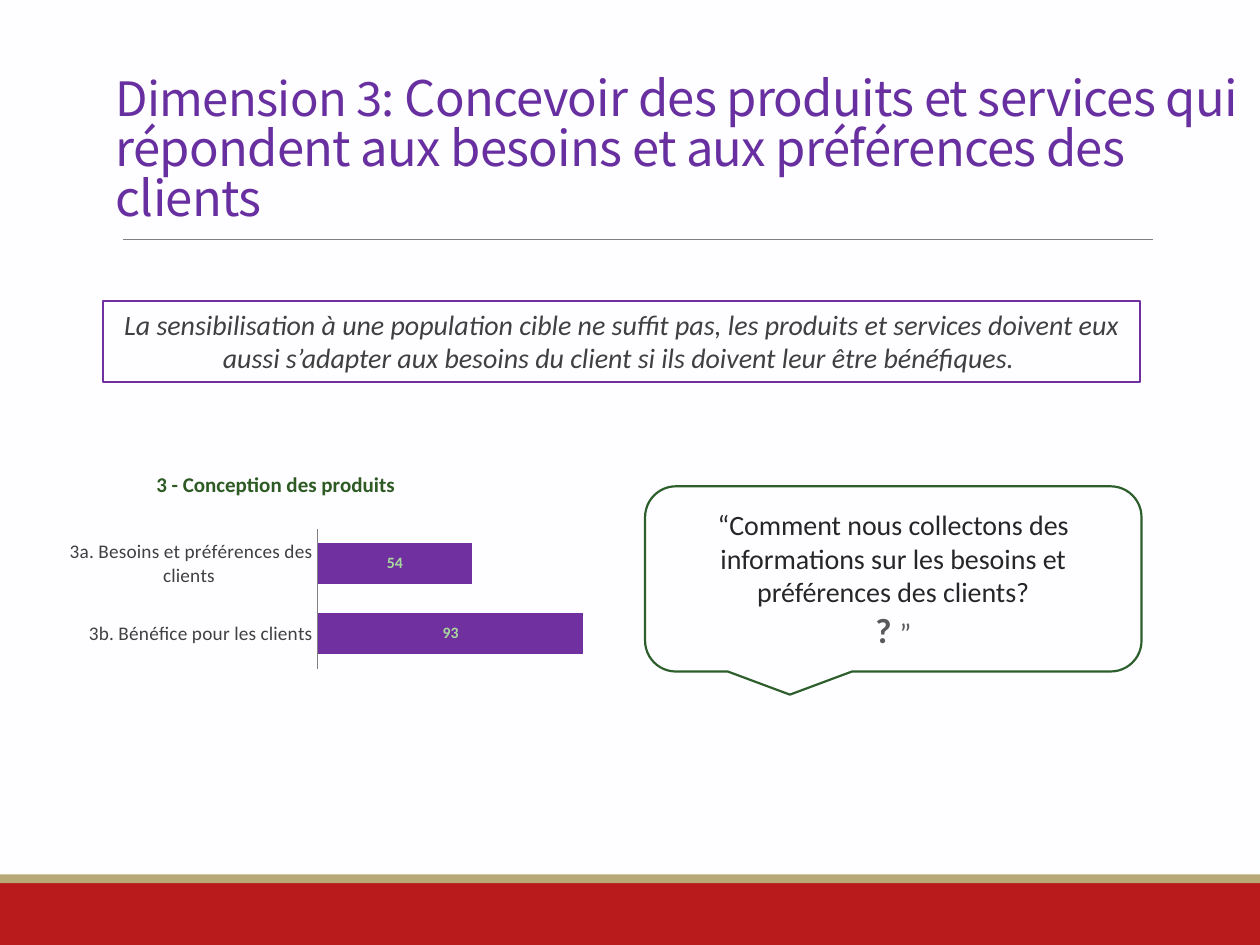
from pptx import Presentation
from pptx.chart.data import CategoryChartData
from pptx.dml.color import RGBColor
from pptx.enum.chart import XL_CHART_TYPE as ChartType, XL_LABEL_POSITION as LabelPosition, XL_TICK_MARK as TickMark
from pptx.enum.shapes import MSO_CONNECTOR as Connector, MSO_SHAPE as Shape
from pptx.enum.text import MSO_ANCHOR as Anchor, PP_ALIGN as Align
from pptx.oxml import parse_xml
from pptx.oxml.ns import nsdecls, qn
from pptx.util import Inches, Pt

PAPER = RGBColor(0xFE, 0xFD, 0xFF)
RED = RGBColor(0xB9, 0x1A, 0x1B)
GOLD = RGBColor(0xB8, 0xAA, 0x76)
GRAY = RGBColor(0x80, 0x80, 0x80)
TITLE_PURPLE = RGBColor(0x68, 0x2F, 0xA1)
PURPLE = RGBColor(0x70, 0x30, 0xA0)
GREEN = RGBColor(0x2D, 0x5F, 0x2D)
CHART_GREEN = RGBColor(0x2D, 0x5B, 0x23)
LABEL_GREEN = RGBColor(0xA7, 0xD9, 0x9C)
INK = RGBColor(0x26, 0x26, 0x26)
TEXT_GRAY = RGBColor(0x40, 0x40, 0x40)
MARK_GRAY = RGBColor(0x59, 0x59, 0x59)
BODY_FONT = "Calibri"
TITLE_FONT = "Noto Sans CJK KR"


def style_font(font, size, color, name=BODY_FONT, bold=False, italic=False):
    font.name, font.size = name, Pt(size)
    font.bold, font.italic = bold, italic
    font.color.rgb = color


def write_text(paragraph, text, spacing=None, **style):
    run = paragraph.add_run()
    run.text = text
    style_font(run.font, **style)
    if spacing is not None:
        run.font._element.set("spc", str(round(spacing * 100)))


def place_manually(element, index, inner=False, **fractions):
    for layout in element.findall(qn("c:layout")):
        element.remove(layout)
    target = '<c:layoutTarget val="inner"/>' if inner else ""
    modes = "".join(f'<c:{axis}Mode val="edge"/>' for axis in "xy")
    values = "".join(f'<c:{key} val="{value}"/>' for key, value in fractions.items())
    element.insert(index, parse_xml(
        f'<c:layout {nsdecls("c")}><c:manualLayout>{target}{modes}{values}</c:manualLayout></c:layout>'))


class SlideBuilder:
    def __init__(self, slide):
        self.slide = slide
        slide.background.fill.solid()
        slide.background.fill.fore_color.rgb = PAPER

    def shape(self, kind, left, top, width, height, fill=None, line=None, line_width=1.0):
        shape = self.slide.shapes.add_shape(kind, Inches(left), Inches(top), Inches(width), Inches(height))
        shape.shadow.inherit = False
        if fill is None:
            shape.fill.background()
        else:
            shape.fill.solid()
            shape.fill.fore_color.rgb = fill
        if line is None:
            shape.line.fill.background()
        else:
            shape.line.color.rgb = line
            shape.line.width = Pt(line_width)
        return shape

    def rule(self, left, right, top):
        connector = self.slide.shapes.add_connector(
            Connector.STRAIGHT, Inches(left), Inches(top), Inches(right), Inches(top))
        connector.line.color.rgb = GRAY
        connector.line.width = Pt(0.5)
        connector._element.spPr.append(parse_xml(f'<a:effectLst {nsdecls("a")}/>'))

    def text_box(self, left, top, width, height):
        return self.slide.shapes.add_textbox(Inches(left), Inches(top), Inches(width), Inches(height))

    def fill_text(self, shape, paragraphs, anchor=Anchor.TOP, align=Align.CENTER, line_spacing=None):
        frame = shape.text_frame
        frame.word_wrap = True
        frame.vertical_anchor = anchor
        for index, runs in enumerate(paragraphs):
            paragraph = frame.add_paragraph() if index else frame.paragraphs[0]
            paragraph.alignment = align
            paragraph.line_spacing = line_spacing
            for text, style in runs:
                write_text(paragraph, text, **style)

    def bar_chart(self, left, top, width, height, title, scores):
        data = CategoryChartData()
        data.categories = list(scores)
        data.add_series("Series 1", list(scores.values()))
        chart = self.slide.shapes.add_chart(
            ChartType.BAR_CLUSTERED, Inches(left), Inches(top), Inches(width), Inches(height), data).chart
        style_font(chart.font, 10, RGBColor(0, 0, 0))
        chart.has_legend = False
        chart.has_title = True
        write_text(chart.chart_title.text_frame.paragraphs[0], title, size=12, color=CHART_GREEN, bold=True)
        place_manually(chart.chart_title.element, 1, x=0.19, y=0.04)
        place_manually(chart.element.chart.plotArea, 0, inner=True, x=0.487, y=0.197, w=0.513, h=0.355)

        category_axis = chart.category_axis
        category_axis.reverse_order = True
        category_axis.major_tick_mark = category_axis.minor_tick_mark = TickMark.NONE
        category_axis.format.line.color.rgb = GRAY
        category_axis.format.line.width = Pt(0.75)
        style_font(category_axis.tick_labels.font, 11, TEXT_GRAY)
        value_axis = chart.value_axis
        value_axis.minimum_scale, value_axis.maximum_scale = 0, 100
        value_axis.has_major_gridlines = False
        value_axis.visible = False

        plot = chart.plots[0]
        plot.gap_width = 70
        plot.vary_by_categories = False
        series = plot.series[0]
        series.format.fill.solid()
        series.format.fill.fore_color.rgb = PURPLE
        labels = series.data_labels
        labels.show_value = True
        labels.position = LabelPosition.CENTER
        labels.number_format, labels.number_format_is_linked = "0", False
        style_font(labels.font, 9, LABEL_GREEN, bold=True)


def main():
    presentation = Presentation()
    presentation.slide_width, presentation.slide_height = Inches(10), Inches(7.5)
    builder = SlideBuilder(presentation.slides.add_slide(presentation.slide_layouts[6]))

    builder.shape(Shape.RECTANGLE, 0, 7, 10, 0.5, fill=RED)
    builder.shape(Shape.RECTANGLE, 0, 6.94, 10, 0.07, fill=GOLD)
    builder.rule(0.98, 9.15, 1.9)

    title_style = dict(color=TITLE_PURPLE, name=TITLE_FONT, spacing=-0.4)
    builder.fill_text(builder.text_box(0.82, 0.26, 9.17, 1.59), [[
        ("Dimension 3: ", dict(title_style, size=27)),
        ("Concevoir des produits et services qui répondent aux besoins et aux préférences des clients",
         dict(title_style, size=28)),
    ]], anchor=Anchor.BOTTOM, align=Align.LEFT, line_spacing=0.85)

    statement = builder.shape(Shape.RECTANGLE, 0.82, 2.39, 8.23, 0.64, line=PURPLE)
    builder.fill_text(statement, [[
        ("La sensibilisation à une population cible ne suffit pas, les produits et services doivent eux "
         "aussi s’adapter aux besoins du client si ils doivent leur être bénéfiques. ",
         dict(size=16, color=TEXT_GRAY, italic=True)),
    ]])

    question = builder.shape(Shape.ROUNDED_RECTANGULAR_CALLOUT, 5.12, 3.86, 3.94, 1.47,
                             fill=PAPER, line=GREEN, line_width=1.25)
    builder.fill_text(question, [
        [("“Comment nous collectons des informations sur les besoins et préférences des clients?",
          dict(size=16, color=INK))],
        [("? ", dict(size=20, color=MARK_GRAY, bold=True)), ("”", dict(size=16, color=MARK_GRAY))],
    ], anchor=Anchor.MIDDLE)

    builder.bar_chart(0.37, 3.58, 4.42, 3.13, "3 - Conception des produits ", {
        "3a. Besoins et préférences des clients ": 54,
        "3b. Bénéfice pour les clients": 93,
    })
    presentation.save("out.pptx")


if __name__ == "__main__":
    main()
